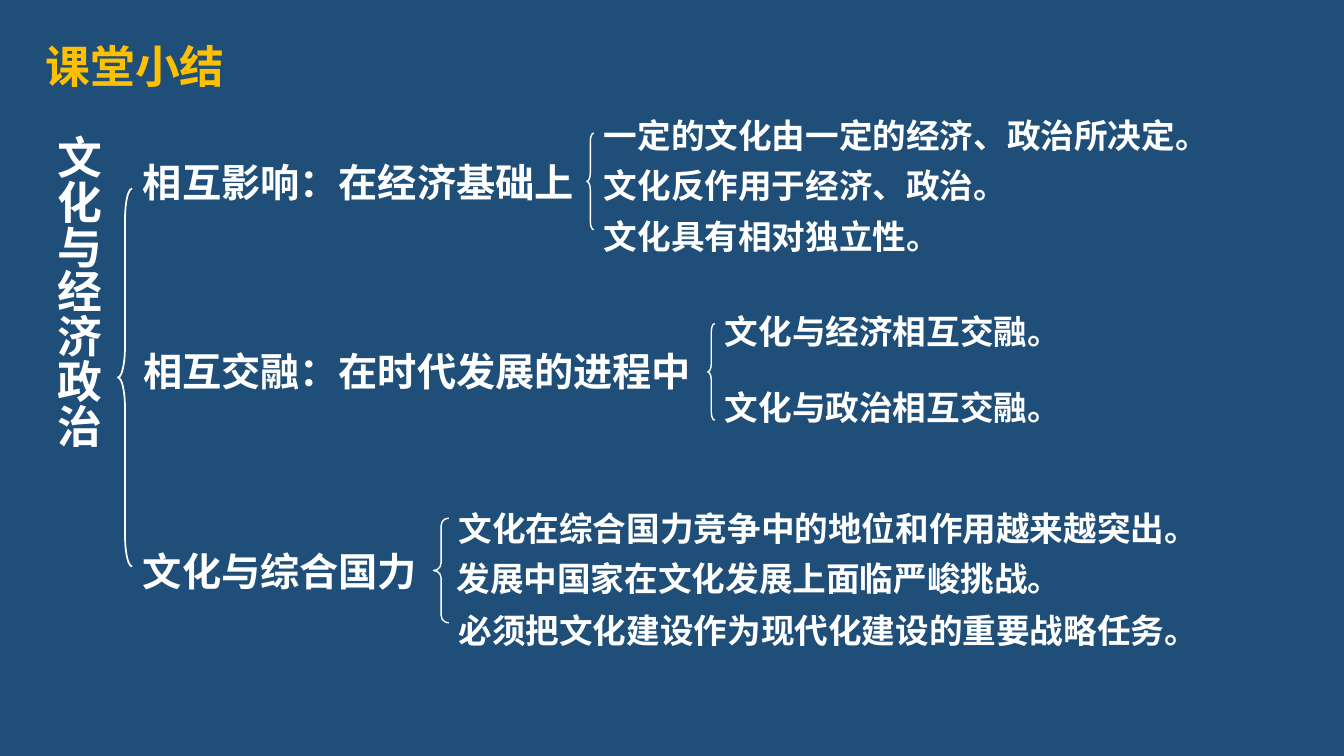
import pptx
import pptx.util
import pptx.dml.color
import pptx.enum.shapes
import pptx.enum.text
from dataclasses import dataclass
from lxml import etree
from pptx.util import Inches


@dataclass(frozen=True)
class Theme:
    background: str = "1F4E79"
    text: str = "FFFFFF"
    accent: str = "FFC000"
    heading_font: str = "Noto Sans CJK SC"
    detail_font: str = "Arial"
    title_size: int = 32
    branch_size: int = 28
    detail_size: int = 24


def rgb(value):
    return pptx.dml.color.RGBColor.from_string(value)


class SummarySlide:
    def __init__(self, deck, theme):
        self.theme = theme
        self.slide = deck.slides.add_slide(deck.slide_layouts[5])
        fill = self.slide.background.fill
        fill.solid()
        fill.fore_color.rgb = rgb(theme.background)

    def set_text(self, box, text, size, font, color, align=pptx.enum.text.PP_ALIGN.LEFT):
        frame = box.text_frame
        frame.text = text
        frame.word_wrap = True
        frame.auto_size = pptx.enum.text.MSO_AUTO_SIZE.SHAPE_TO_FIT_TEXT
        frame.vertical_anchor = pptx.enum.text.MSO_ANCHOR.TOP
        paragraph = frame.paragraphs[0]
        paragraph.alignment = align
        run = paragraph.runs[0]
        run.font.size = pptx.util.Pt(size)
        run.font.bold = True
        run.font.name = font
        run.font.color.rgb = rgb(color)
        # East Asian glyphs need their own typeface entry
        east_asian = etree.SubElement(run.font._element, pptx.oxml.ns.qn("a:ea"))
        east_asian.set("typeface", self.theme.heading_font)

    def title(self, text, left, top, width, height):
        box = self.slide.shapes.title
        box.left, box.top = Inches(left), Inches(top)
        box.width, box.height = Inches(width), Inches(height)
        self.set_text(box, text, self.theme.title_size, self.theme.heading_font,
                      self.theme.accent)

    def text_box(self, left, top, width, height):
        return self.slide.shapes.add_textbox(
            Inches(left), Inches(top), Inches(width), Inches(height))

    def topic(self, text, left, top, width, height):
        box = self.text_box(left, top, width, height)
        self.set_text(box, text, self.theme.title_size, self.theme.heading_font,
                      self.theme.text, pptx.enum.text.PP_ALIGN.CENTER)
        box.text_frame._txBody.bodyPr.set("vert", "eaVert")

    def branch(self, text, left, top, width):
        box = self.text_box(left, top, width, 0.57)
        self.set_text(box, text, self.theme.branch_size, self.theme.heading_font,
                      self.theme.text)

    def detail(self, text, left, top, width):
        box = self.text_box(left, top, width, 0.5)
        self.set_text(box, text, self.theme.detail_size, self.theme.detail_font,
                      self.theme.text)

    def brace(self, left, top, width, height, curve, weight=1):
        brace = self.slide.shapes.add_shape(
            pptx.enum.shapes.MSO_SHAPE.LEFT_BRACE,
            Inches(left), Inches(top), Inches(width), Inches(height))
        brace.adjustments[0] = curve
        brace.shadow.inherit = False
        brace.fill.background()
        brace.line.color.rgb = rgb(self.theme.text)
        brace.line.width = pptx.util.Pt(weight)


# Each branch: text, top, width; its brace; its details as text, left, top, width
BRANCHES = [
    (("相互影响：在经济基础上", 1.52, 4.77), (5.82, 1.32, 0.07, 0.96, 1.14), [
        ("一定的文化由一定的经济、政治所决定。", 5.89, 1.09, 7.09),
        ("文化反作用于经济、政治。", 5.89, 1.59, 7.09),
        ("文化具有相对独立性。", 5.89, 2.09, 6.51),
    ]),
    (("相互交融：在时代发展的进程中", 3.4, 6.11), (7.02, 3.21, 0.07, 0.96, 1.14), [
        ("文化与经济相互交融。", 7.09, 3.04, 5.89),
        ("文化与政治相互交融。", 7.09, 3.79, 5.89),
    ]),
    (("文化与综合国力", 5.38, 3.73), (4.3, 5.14, 0.15, 1.04, 0.5), [
        ("文化在综合国力竞争中的地位和作用越来越突出。", 4.45, 4.99, 8.53),
        ("发展中国家在文化发展上面临严峻挑战。", 4.43, 5.49, 8.54),
        ("必须把文化建设作为现代化建设的重要战略任务。", 4.45, 6, 8.56),
    ]),
]
BRANCH_LEFT = 1.32


def main():
    deck = pptx.Presentation()
    deck.slide_width, deck.slide_height = Inches(13.33), Inches(7.5)
    summary = SummarySlide(deck, Theme())

    # Title and root topic
    summary.title("课堂小结", 0.35, 0.33, 12.63, 0.64)
    summary.topic("文化与经济政治", 0.35, 1.24, 0.74, 5.02)
    summary.brace(1.17, 1.87, 0.14, 3.75, curve=2.2, weight=1.25)

    # Branches with their details
    for (text, top, width), brace, details in BRANCHES:
        summary.branch(text, BRANCH_LEFT, top, width)
        summary.brace(*brace)
        for detail in details:
            summary.detail(*detail)

    deck.save("out.pptx")


if __name__ == "__main__":
    main()
